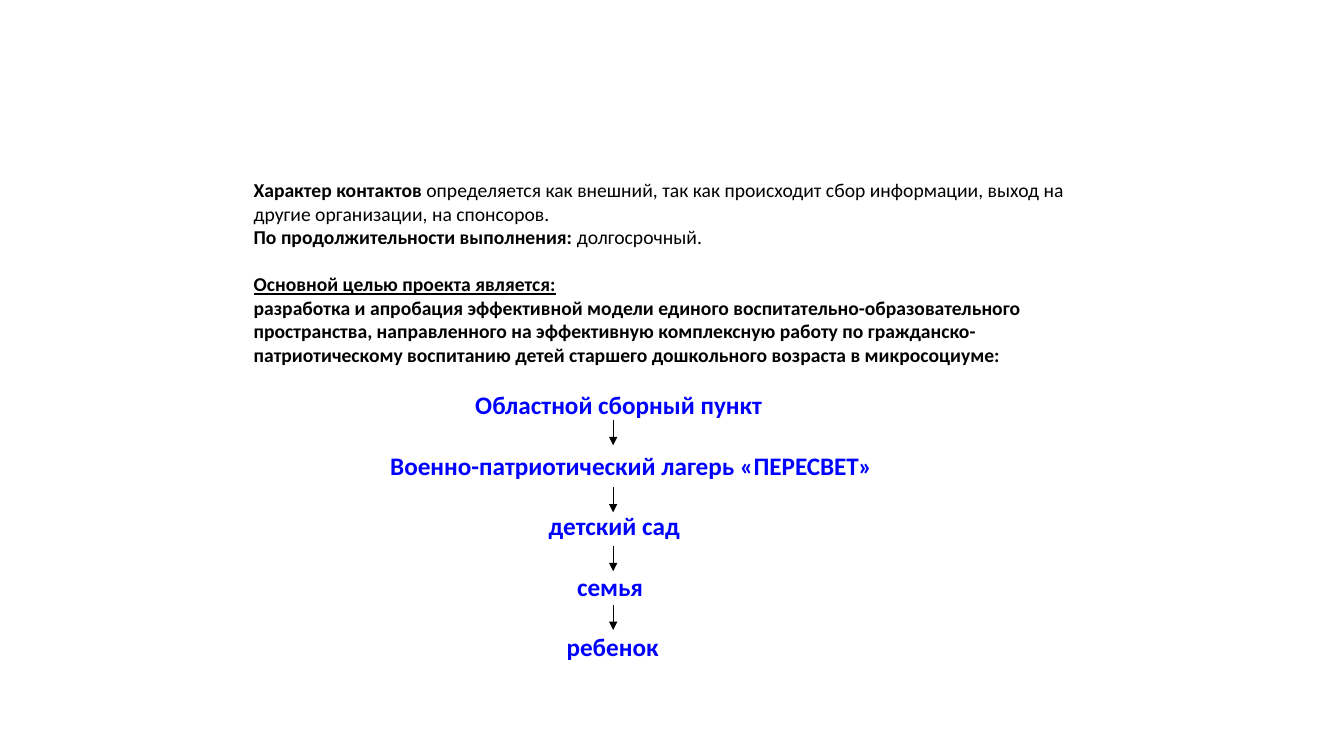
from dataclasses import dataclass

from lxml import etree
from pptx import Presentation
from pptx.dml.color import RGBColor
from pptx.enum.shapes import MSO_CONNECTOR
from pptx.enum.text import MSO_ANCHOR, MSO_AUTO_SIZE, PP_ALIGN
from pptx.oxml.ns import qn
from pptx.util import Pt

STRAIGHT = MSO_CONNECTOR.STRAIGHT
LEFT = PP_ALIGN.LEFT
MIDDLE = MSO_ANCHOR.MIDDLE
NO_AUTOFIT = MSO_AUTO_SIZE.NONE

EMU_PER_PX = 9525
COLORS = {"text": "000000", "step": "0000FF", "arrow": "000000"}
LINE_RATIO = 1.2
TEXT_SIZE = 14
STEP_SIZE = 18
TEXT_LINE = TEXT_SIZE * LINE_RATIO
STEP_LINE = STEP_SIZE * LINE_RATIO
ARROW_X = 584
ARROW_LENGTH = 24
ARROW_TOPS = (400, 464, 520, 576)


@dataclass(frozen=True)
class Phrase:
    text: str
    bold: bool = True
    underline: bool = False


@dataclass(frozen=True)
class Line:
    phrases: tuple[Phrase, ...]
    size: int = TEXT_SIZE
    color: str = "text"
    indent: int = 0
    space_before: float = 0


@dataclass(frozen=True)
class Step:
    text: str
    indent: int


DESCRIPTION = (
    Line((
        Phrase("Характер контактов"),
        Phrase(" определяется как внешний, так как происходит сбор информации, "
               "выход на другие организации, на спонсоров.", bold=False),
    )),
    Line((
        Phrase("По продолжительности выполнения:"),
        Phrase(" долгосрочный.", bold=False),
    )),
    Line((Phrase("Основной целью проекта является:", underline=True),),
         space_before=TEXT_LINE),
    Line((Phrase("разработка и апробация эффективной модели единого "
                 "воспитательно-образовательного пространства, направленного на "
                 "эффективную комплексную работу по гражданско-патриотическому "
                 "воспитанию детей старшего дошкольного возраста в микросоциуме:"),)),
)

STEPS = (
    Step("Областной сборный пункт", 211),
    Step("Военно-патриотический лагерь «ПЕРЕСВЕТ»", 130),
    Step("детский сад", 281),
    Step("семья", 308),
    Step("ребенок", 298),
)


def px(length: int) -> int:
    return length * EMU_PER_PX


def set_all(target, values: dict) -> None:
    for name, value in values.items():
        setattr(target, name, value)


def step_lines() -> list[Line]:
    return [
        Line((Phrase(step.text),), STEP_SIZE, "step", step.indent,
             STEP_LINE if index else TEXT_LINE)
        for index, step in enumerate(STEPS)
    ]


def write_line(paragraph, line: Line) -> None:
    paragraph._p.get_or_add_pPr().set("marL", str(px(line.indent)))
    set_all(paragraph, {
        "alignment": LEFT,
        "line_spacing": Pt(line.size * LINE_RATIO),
        "space_before": Pt(line.space_before),
    })
    for phrase in line.phrases:
        run = paragraph.add_run()
        run.text = phrase.text
        set_all(run.font, {
            "name": "Calibri",
            "size": Pt(line.size),
            "bold": phrase.bold,
            "underline": phrase.underline,
        })
        run.font.color.rgb = RGBColor.from_string(COLORS[line.color])


def write_goal(title) -> None:
    set_all(title, {"left": px(232), "top": px(160),
                    "width": px(816), "height": px(480)})
    frame = title.text_frame
    set_all(frame, {"word_wrap": True, "vertical_anchor": MIDDLE,
                    "auto_size": NO_AUTOFIT})
    for index, line in enumerate([*DESCRIPTION, *step_lines()]):
        paragraph = frame.add_paragraph() if index else frame.paragraphs[0]
        write_line(paragraph, line)


def draw_arrow(slide, top: int) -> None:
    arrow = slide.shapes.add_connector(
        STRAIGHT, px(ARROW_X), px(top), px(ARROW_X), px(top + ARROW_LENGTH))
    arrow.line.width = Pt(0.75)
    arrow.line.color.rgb = RGBColor.from_string(COLORS["arrow"])
    etree.SubElement(arrow.line._get_or_add_ln(), qn("a:tailEnd"), type="triangle")
    etree.SubElement(arrow._element.spPr, qn("a:effectLst"))


def main() -> None:
    deck = Presentation()
    set_all(deck, {"slide_width": px(1280), "slide_height": px(720)})
    slide = deck.slides.add_slide(deck.slide_layouts[0])
    subtitle = slide.placeholders[1]._element
    subtitle.getparent().remove(subtitle)
    write_goal(slide.shapes.title)
    for top in ARROW_TOPS:
        draw_arrow(slide, top)
    deck.save("out.pptx")


if __name__ == "__main__":
    main()
